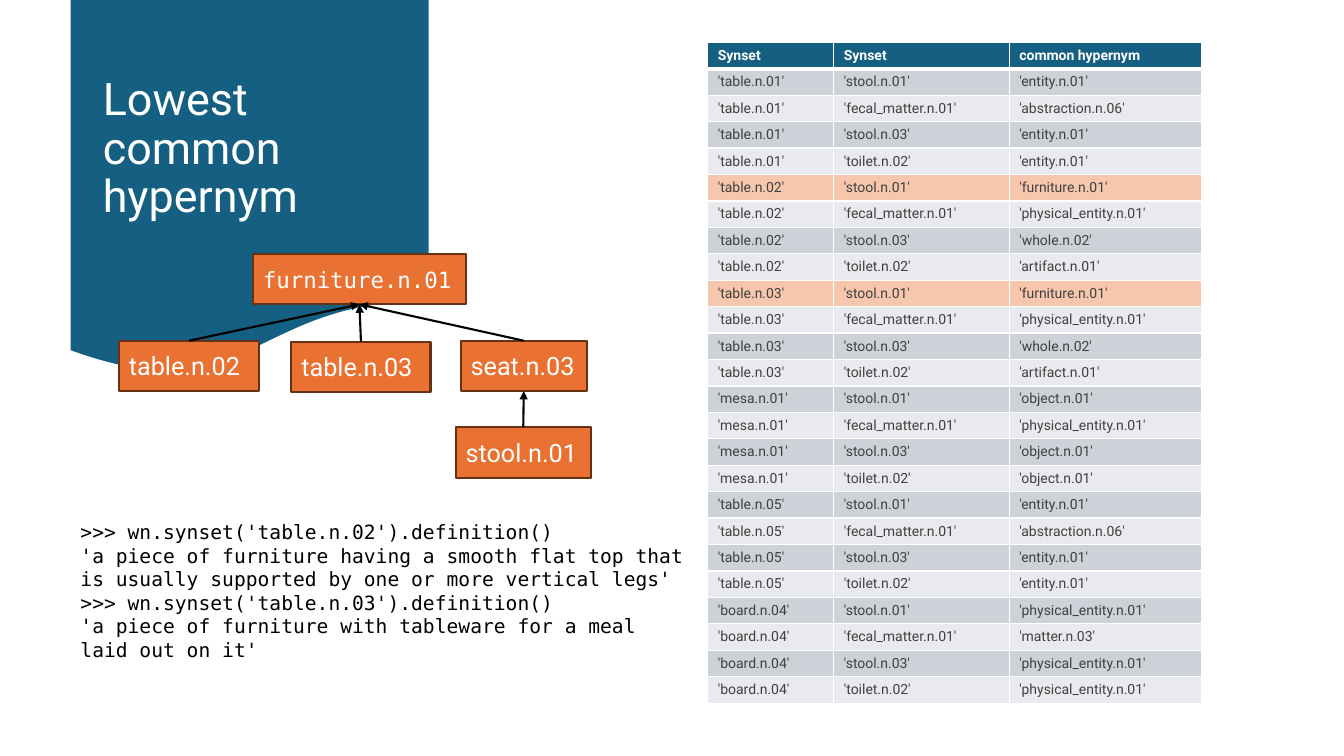
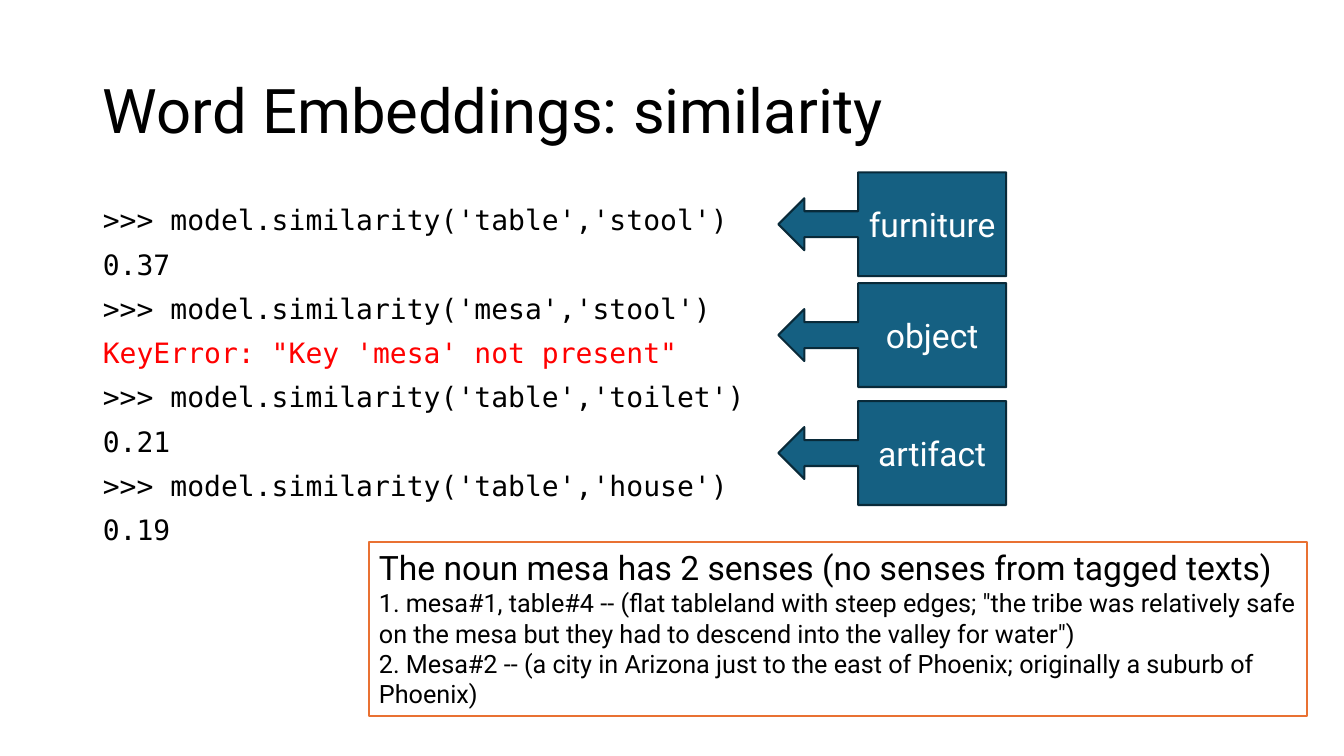
from itertools import product

from lxml import etree
from pptx import Presentation
from pptx.dml.color import RGBColor
from pptx.enum.shapes import MSO_CONNECTOR, MSO_SHAPE
from pptx.enum.text import MSO_ANCHOR, MSO_AUTO_SIZE, PP_ALIGN
from pptx.oxml.ns import qn
from pptx.util import Emu, Pt

PX = 9144
SANS, MONO = "Roboto", "DejaVu Sans Mono"
WHITE = RGBColor(0xFF, 0xFF, 0xFF)
BLACK = RGBColor(0x00, 0x00, 0x00)
RED = RGBColor(0xFF, 0x00, 0x00)
BLUE = RGBColor(0x15, 0x60, 0x82)
NAVY = RGBColor(0x09, 0x2A, 0x39)
ORANGE = RGBColor(0xE9, 0x71, 0x32)
BROWN = RGBColor(0x66, 0x32, 0x16)
PEACH = RGBColor(0xF6, 0xC6, 0xAD)
GRAY = RGBColor(0x40, 0x40, 0x40)
BANDS = (RGBColor(0xE8, 0xEA, 0xED), RGBColor(0xCC, 0xD2, 0xD8))

RECT = MSO_SHAPE.RECTANGLE
WAVE = MSO_SHAPE.FLOWCHART_DOCUMENT
CALLOUT = MSO_SHAPE.LEFT_ARROW_CALLOUT
STRAIGHT = MSO_CONNECTOR.STRAIGHT
TOP, MIDDLE, BOTTOM = MSO_ANCHOR.TOP, MSO_ANCHOR.MIDDLE, MSO_ANCHOR.BOTTOM
LEFT, CENTER = PP_ALIGN.LEFT, PP_ALIGN.CENTER
FIXED = MSO_AUTO_SIZE.NONE

NOUNS = ("table.n.01", "table.n.02", "table.n.03",
         "mesa.n.01", "table.n.05", "board.n.04")
STOOLS = ("stool.n.01", "fecal_matter.n.01", "stool.n.03", "toilet.n.02")
SHARED = "furniture.n.01"
ENTITY = ("entity.n.01", "abstraction.n.06", "entity.n.01", "entity.n.01")
GOODS = (SHARED, "physical_entity.n.01", "whole.n.02", "artifact.n.01")
LAND = ("object.n.01", "physical_entity.n.01", "object.n.01", "object.n.01")
BOARD = ("physical_entity.n.01", "matter.n.03",
         "physical_entity.n.01", "physical_entity.n.01")
PARENTS = ENTITY + GOODS + GOODS + LAND + ENTITY + BOARD


def px(*sizes):
    return [Emu(size * PX) for size in sizes]


def write(frame, lines, anchor=TOP, align=LEFT, space=None, before=0):
    frame.word_wrap = True
    frame.auto_size = FIXED
    frame.vertical_anchor = anchor
    for spot, (text, size, face, color) in enumerate(lines):
        para = frame.paragraphs[0] if spot == 0 else frame.add_paragraph()
        para.alignment = align
        para.space_before = Pt(before if spot else 0)
        if space:
            para.line_spacing = space
        run = para.add_run()
        run.text = text
        font = run.font
        font.size, font.name, font.color.rgb = Pt(size), face, color


def place(shape, box):
    shape.left, shape.top, shape.width, shape.height = px(*box)


def set_title(slide, box, text, size, color):
    title = slide.shapes.title
    place(title, box)
    write(title.text_frame, [(text, size, SANS, color)], MIDDLE, space=0.9)


def add_block(slide, kind, box, fill, edge=None):
    block = slide.shapes.add_shape(kind, *px(*box))
    block.shadow.inherit = False
    block.fill.solid()
    block.fill.fore_color.rgb = fill
    if edge is None:
        block.line.fill.background()
    else:
        block.line.color.rgb = edge
        block.line.width = Pt(1.5)
    return block


def add_arrow(slide, child, parent):
    arrow = slide.shapes.add_connector(STRAIGHT, 0, 0, 0, 0)
    arrow.begin_connect(child, 0)
    arrow.end_connect(parent, 2)
    arrow.line.color.rgb = BLACK
    arrow.line.width = Pt(1.5)
    props = arrow._element.spPr
    etree.SubElement(props.find(qn("a:ln")), qn("a:tailEnd"), type="triangle")
    etree.SubElement(props, qn("a:effectLst"))


def add_tree(slide, left, top):
    def node(x, y, width, text, size=18, face=SANS):
        box = (left + x, top + y, width, 50)
        block = add_block(slide, RECT, box, ORANGE, BROWN)
        write(block.text_frame, [(text, size, face, WHITE)], MIDDLE)
        return block

    root = node(133, 0, 211, SHARED, 16, MONO)
    tables = [node(0, 86, 139, "table.n.02"), node(171, 87, 138, "table.n.03")]
    seat = node(339, 86, 125, "seat.n.03")
    stool = node(334, 172, 134, "stool.n.01")
    for child in (*tables, seat):
        add_arrow(slide, child, root)
    add_arrow(slide, stool, seat)


def set_cell(cell, text, fill, color, edges, bold=False):
    props = cell._tc.get_or_add_tcPr()
    for side, width in zip("LRTB", edges):
        line = etree.SubElement(props, qn("a:ln" + side), w=str(Pt(width)))
        solid = etree.SubElement(line, qn("a:solidFill"))
        etree.SubElement(solid, qn("a:srgbClr"), val=str(WHITE))
    cell.fill.solid()
    cell.fill.fore_color.rgb = fill
    cell.vertical_anchor = BOTTOM
    cell.margin_left, cell.margin_right = px(10, 0)
    cell.margin_top, cell.margin_bottom = px(5, 5)
    run = cell.text_frame.paragraphs[0].add_run()
    run.text = text
    font = run.font
    font.size, font.name, font.bold = Pt(10), SANS, bold
    font.color.rgb = color


def add_grid(slide, left, top):
    widths, height = (125, 174, 191), 26
    pairs = product(NOUNS, STOOLS)
    rows = [(*pair, parent) for pair, parent in zip(pairs, PARENTS)]
    box = px(left, top, sum(widths), height * (len(rows) + 1))
    grid = slide.shapes.add_table(len(rows) + 1, len(widths), *box).table
    grid.first_row = grid.horz_banding = False
    for col, width in zip(grid.columns, px(*widths)):
        col.width = width
    for row in grid.rows:
        row.height = px(height)[0]
    for col, text in enumerate(("Synset", "Synset", "common hypernym")):
        set_cell(grid.cell(0, col), text, BLUE, WHITE, (1, 1, 1, 3), True)
    for row, words in enumerate(rows, 1):
        fill = PEACH if words[-1] == SHARED else BANDS[row % 2]
        edges = (1, 1, 3 if row == 1 else 1, 1)
        for col, word in enumerate(words):
            set_cell(grid.cell(row, col), f"'{word}'", fill, GRAY, edges)


def add_code(slide, box):
    lines = (
        ">>> wn.synset('table.n.02').definition()",
        "'a piece of furniture having a smooth flat top that is usually "
        "supported by one or more vertical legs'",
        ">>> wn.synset('table.n.03').definition()",
        "'a piece of furniture with tableware for a meal laid out on it'",
    )
    frame = slide.shapes.add_textbox(*px(*box)).text_frame
    write(frame, [(line, 14, MONO, BLACK) for line in lines])


def set_body(slide, box):
    lines = (
        (">>> model.similarity('table','stool')", BLACK),
        ("0.37", BLACK),
        (">>> model.similarity('mesa','stool')", BLACK),
        ("KeyError: \"Key 'mesa' not present\"", RED),
        (">>> model.similarity('table','toilet')", BLACK),
        ("0.21", BLACK),
        (">>> model.similarity('table','house')", BLACK),
        ("0.19", BLACK),
    )
    body = slide.placeholders[1]
    place(body, box)
    write(body.text_frame, [(text, 20, MONO, color) for text, color in lines],
          space=0.9, before=10)
    for para in body.text_frame.paragraphs:
        props = para._p.get_or_add_pPr()
        props.set("marL", "0")
        props.set("indent", "0")
        etree.SubElement(props, qn("a:buNone"))


def add_labels(slide, left, top):
    for drop, text in ((0, "furniture"), (110, "object"), (227, "artifact")):
        box = (left, top + drop, 226, 103)
        label = add_block(slide, CALLOUT, box, BLUE, NAVY)
        write(label.text_frame, [(text, 24, SANS, WHITE)], MIDDLE, CENTER)


def add_note(slide, box):
    lines = (
        ("The noun mesa has 2 senses (no senses from tagged texts)", 24),
        ("1. mesa#1, table#4 -- (flat tableland with steep edges; \"the tribe "
         "was relatively safe on the mesa but they had to descend into the "
         "valley for water\")", 18),
        ("2. Mesa#2 -- (a city in Arizona just to the east of Phoenix; "
         "originally a suburb of Phoenix)", 18),
    )
    note = add_block(slide, RECT, box, WHITE, ORANGE)
    write(note.text_frame, [(text, size, SANS, BLACK) for text, size in lines])


def build_tree(deck):
    slide = deck.slides.add_slide(deck.slide_layouts[5])
    wave = add_block(slide, WAVE, (70, 0, 355, 372), BLUE)
    slide.shapes._spTree.insert(2, wave._element)
    set_title(slide, (92, 19, 311, 259), "Lowest common hypernym", 32, WHITE)
    add_grid(slide, 702, 42)
    add_code(slide, (70, 511, 620, 151))
    add_tree(slide, 118, 252)


def build_scores(deck):
    slide = deck.slides.add_slide(deck.slide_layouts[1])
    set_title(slide, (92, 40, 1150, 145), "Word Embeddings: similarity",
              44, BLACK)
    set_body(slide, (92, 200, 1150, 476))
    add_labels(slide, 772, 171)
    add_note(slide, (366, 538, 930, 172))


def main():
    deck = Presentation()
    deck.slide_width, deck.slide_height = px(1333, 750)
    build_tree(deck)
    build_scores(deck)
    deck.save("out.pptx")


if __name__ == "__main__":
    main()
